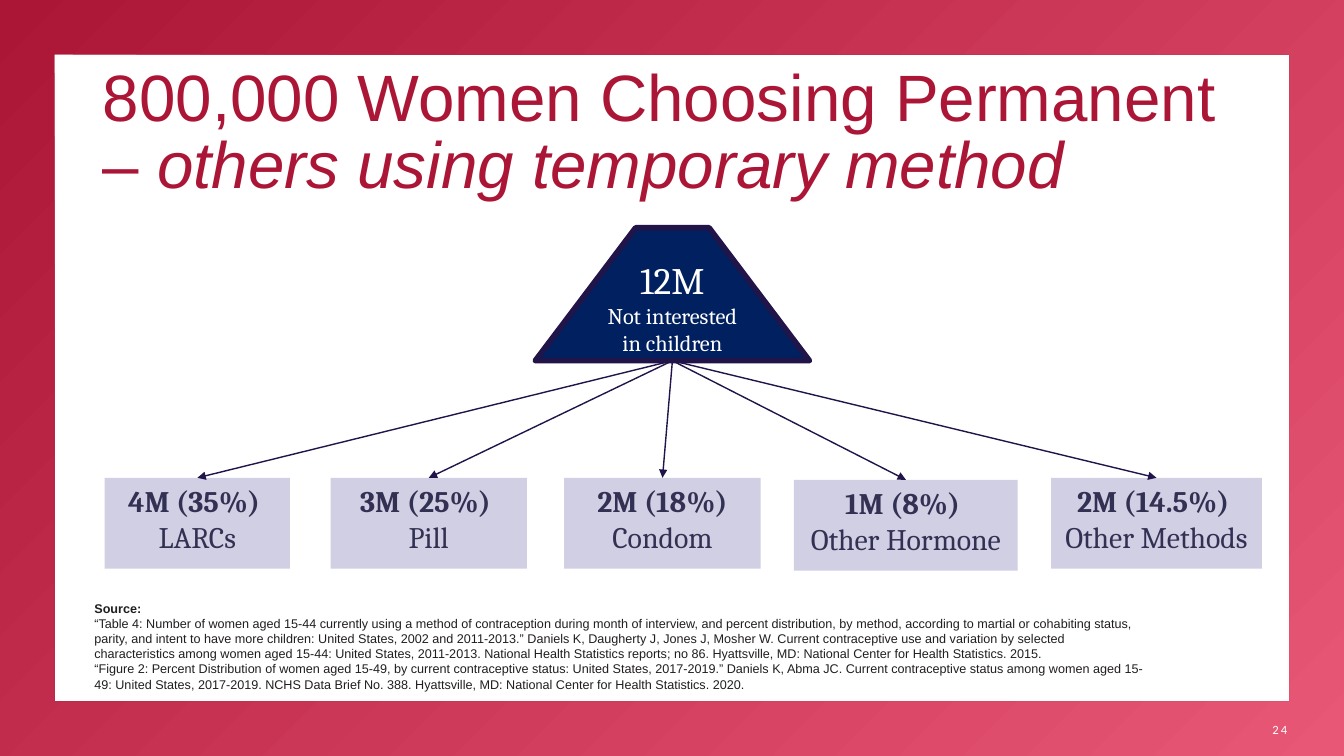
"""Build the slide on contraceptive methods among women wanting no children."""
from dataclasses import dataclass
from typing import NamedTuple

from lxml.etree import SubElement as Sub
from pptx import Presentation
from pptx.dml.color import RGBColor as Rgb
from pptx.enum.shapes import MSO_CONNECTOR as Link, MSO_SHAPE as Kind
from pptx.enum.text import MSO_ANCHOR as Anchor, MSO_AUTO_SIZE as Auto, PP_ALIGN as Align
from pptx.oxml.ns import qn
from pptx.shapes.autoshape import Shape
from pptx.slide import Slide
from pptx.util import Cm, Pt


@dataclass(frozen=True)
class Theme:
    """Colours, fonts and type sizes."""
    red: str = "AC1636"
    pink: str = "E95776"
    navy: str = "002060"
    ink: str = "201449"
    lilac: str = "D0CFE3"
    plum: str = "333153"
    dark: str = "221E1F"
    white: str = "FFFFFF"
    sans: str = "Arial"
    serif: str = "Cambria"
    plain: str = "Calibri"
    title: float = 46.8
    total: float = 26.7
    label: float = 21.3
    note: float = 16
    small: float = 9


class Area(NamedTuple):
    """Left, top, width and height in centimetres."""
    left: float
    top: float
    width: float
    height: float


class Run(NamedTuple):
    """Text with its format values; a newline is a line break."""
    text: str
    size: float
    face: str
    hue: str
    bold: bool = False
    slant: bool = False


class Method(NamedTuple):
    """A method box: its share, its name and its place."""
    share: str
    name: str
    left: float
    width: float
    top: float = 12.04


T = Theme()
METHODS = [
    Method("4M (35%) ", "LARCs", 2.64, 4.67),
    Method("3M (25%) ", "Pill", 8.33, 4.95),
    Method("2M (18%)", "Condom", 14.22, 4.95),
    Method("1M (8%) ", "Other Hormone", 20.01, 5.64, 12.09),
    Method("2M (14.5%) ", "Other Methods", 26.49, 5.31),
]
SOURCES = [
    "“Table 4: Number of women aged 15-44 currently using a method of contraception during month "
    "of interview, and percent distribution, by method, according to martial or cohabiting status, "
    "parity, and intent to have more children: United States, 2002 and 2011-2013.” Daniels K, "
    "Daugherty J, Jones J, Mosher W. Current contraceptive use and variation by selected "
    "characteristics among women aged 15-44: United States, 2011-2013. National Health Statistics "
    "reports; no 86. Hyattsville, MD: National Center for Health Statistics. 2015.",
    "“Figure 2: Percent Distribution of women aged 15-49, by current contraceptive status: United "
    "States, 2017-2019.” Daniels K, Abma JC. Current contraceptive status among women aged 15-49: "
    "United States, 2017-2019. NCHS Data Brief No. 388. Hyattsville, MD: National Center for Health "
    "Statistics. 2020.",
]


def apply(item: object, values: dict) -> None:
    """Set every attribute named in the values."""
    for key, value in values.items():
        setattr(item, key, value)


def write(shape: Shape, paras: list[list[Run]], align: Align = Align.LEFT,
          space: float = 1.0, **frame: object) -> None:
    """Fill a shape with paragraphs of formatted runs."""
    body = shape.text_frame
    apply(body, {"word_wrap": True, "vertical_anchor": Anchor.TOP, **frame})
    for num, runs in enumerate(paras):
        para = body.add_paragraph() if num else body.paragraphs[0]
        apply(para, {"alignment": align, "line_spacing": space})
        for run in runs:
            for row, part in enumerate(run.text.split("\n")):
                if row:
                    para.add_line_break()
                if part:
                    piece = para.add_run()
                    piece.text = part
                    apply(piece.font, {"name": run.face, "size": Pt(run.size),
                                       "bold": run.bold, "italic": run.slant})
                    piece.font.color.rgb = Rgb.from_string(run.hue)


def add_form(slide: Slide, kind: Kind, area: Area) -> Shape:
    """Add a preset shape with no shadow and no line."""
    form = slide.shapes.add_shape(kind, *map(Cm, area))
    form.shadow.inherit = False
    form.line.fill.background()
    return form


def paint(form: Shape, hue: str) -> None:
    """Give a shape a solid fill."""
    form.fill.solid()
    form.fill.fore_color.rgb = Rgb.from_string(hue)


def add_text(slide: Slide, area: Area) -> Shape:
    """Add an empty text box."""
    return slide.shapes.add_textbox(*map(Cm, area))


def add_frame(slide: Slide) -> None:
    """Draw the gradient border of the slide."""
    form = add_form(slide, Kind.FRAME, Area(0, 0, 33.87, 19.05))
    form.adjustments[0] = 0.072
    form.fill.gradient()
    form.fill.gradient_angle = 315
    for stop, hue in zip(form.fill.gradient_stops, (T.red, T.pink)):
        stop.color.rgb = Rgb.from_string(hue)


def add_total(slide: Slide) -> Shape:
    """Draw the trapezoid with the total and return it."""
    form = add_form(slide, Kind.TRAPEZOID, Area(13.49, 5.74, 6.91, 3.35))
    form.adjustments[0] = 0.755
    paint(form, T.navy)
    form.line.color.rgb = Rgb.from_string(T.ink)
    form.line.width = Pt(4)
    write(add_text(slide, Area(15.09, 6.35, 3.71, 2.95)),
          [[Run("12M\n", T.total, T.serif, T.white),
            Run("Not interested in children", T.note, T.serif, T.white)]],
          Align.CENTER, vertical_anchor=Anchor.BOTTOM, margin_left=Cm(0.08),
          margin_top=Cm(1.02), margin_right=Cm(0.08), margin_bottom=Cm(0.33))
    return form


def add_method(slide: Slide, item: Method) -> Shape:
    """Draw one method box and return it."""
    form = add_form(slide, Kind.RECTANGLE, Area(item.left, item.top, item.width, 2.29))
    paint(form, T.lilac)
    write(form, [[Run(item.share + "\n", T.label, T.serif, T.plum, True),
                  Run(item.name, T.label, T.serif, T.plum)]], Align.CENTER)
    return form


def add_arrow(slide: Slide, start: Shape, end: Shape) -> None:
    """Join the bottom of one shape to the top of another."""
    arrow = slide.shapes.add_connector(Link.STRAIGHT, 0, 0, 0, 0)
    arrow.begin_connect(start, 2)
    arrow.end_connect(end, 0)
    arrow.line.color.rgb = Rgb.from_string(T.ink)
    arrow.line.width = Pt(1)
    Sub(arrow.line._get_or_add_ln(), qn("a:tailEnd"), type="triangle")
    Sub(arrow._element.spPr, qn("a:effectLst"))


def main() -> None:
    """Build and save the slide."""
    deck = Presentation()
    apply(deck, {"slide_width": Cm(33.87), "slide_height": Cm(19.05)})
    slide = deck.slides.add_slide(deck.slide_layouts[6])
    add_frame(slide)
    total = add_total(slide)
    boxes = [add_method(slide, item) for item in METHODS]
    for box in boxes:
        add_arrow(slide, total, box)
    write(add_text(slide, Area(2.13, 15.01, 27.03, 2.57)),
          [[Run("Source:", T.small, T.sans, T.dark, True)],
           *([Run(text, T.small, T.sans, T.dark)] for text in SOURCES)],
          auto_size=Auto.SHAPE_TO_FIT_TEXT)
    write(add_text(slide, Area(2.34, 1.57, 29.21, 3.68)),
          [[Run("800,000 Women Choosing Permanent – ", T.title, T.sans, T.red),
            Run("others using temporary method", T.title, T.sans, T.red, slant=True)]],
          space=0.85, vertical_anchor=Anchor.MIDDLE)
    page = add_text(slide, Area(25.07, 17.86, 7.62, 1.02))
    write(page, [[Run("24", T.small, T.plain, T.white)]], Align.RIGHT,
          vertical_anchor=Anchor.MIDDLE)
    page.text_frame.paragraphs[0].runs[0].font._element.set("spc", "150")
    deck.save("out.pptx")


if __name__ == "__main__":
    main()
